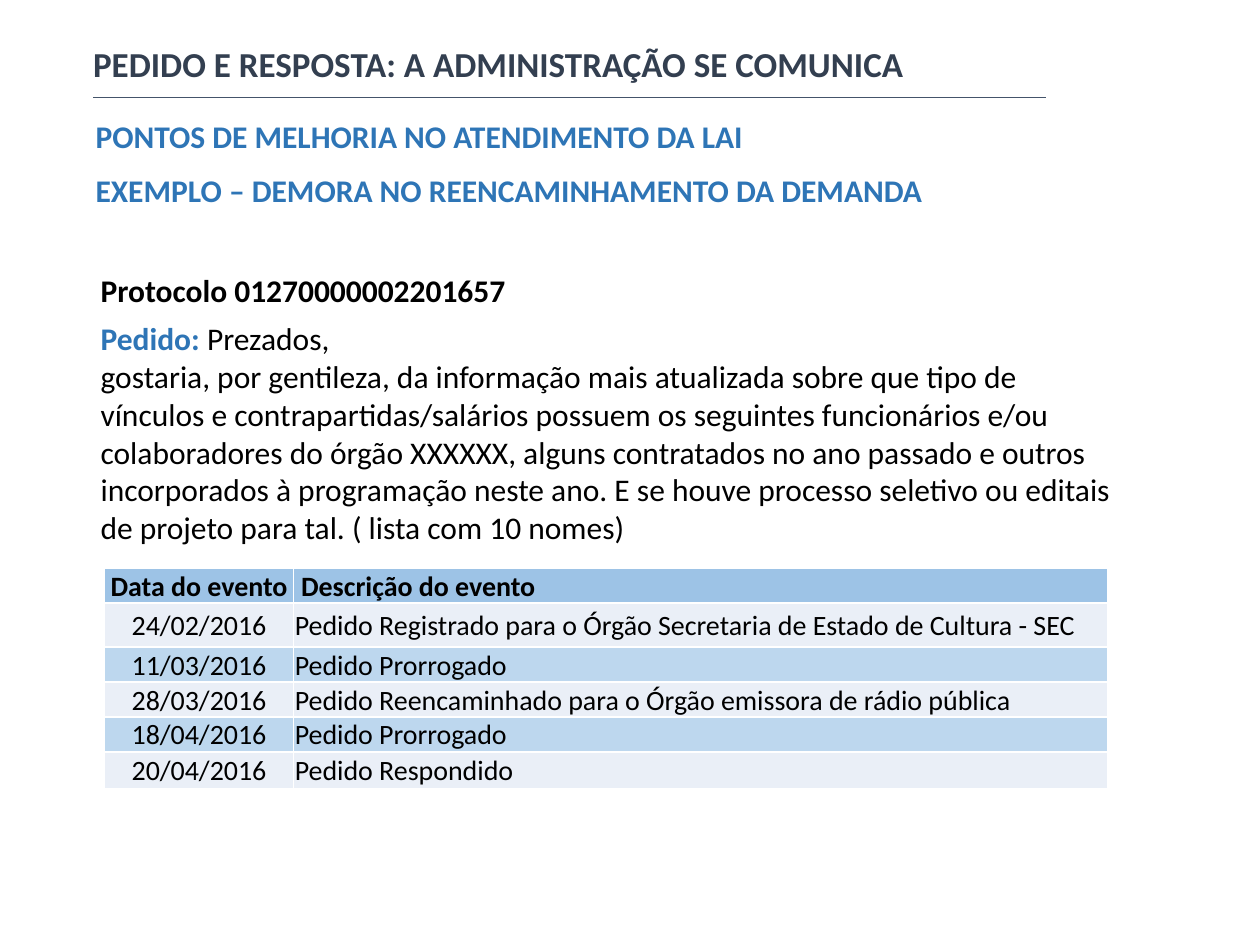
from dataclasses import dataclass

from lxml.etree import SubElement
from pptx import Presentation
from pptx.dml.color import RGBColor
from pptx.enum.shapes import MSO_CONNECTOR as Connector
from pptx.enum.text import MSO_ANCHOR as Anchor, MSO_AUTO_SIZE as AutoSize, PP_ALIGN as Align
from pptx.oxml.ns import qn
from pptx.util import Inches, Pt


@dataclass(frozen=True)
class Theme:
    font: str = "Calibri"
    title_size: int = 20
    body_size: int = 18
    table_size: int = 16
    title: str = "333F50"
    accent: str = "2E75B6"
    text: str = "000000"
    rule: str = "44546A"
    border: str = "FFFFFF"
    header_fill: str = "9DC3E6"
    row_fills: tuple = ("EAEFF7", "BDD7EE")


THEME = Theme()

REQUEST = (
    "gostaria, por gentileza, da informação mais atualizada sobre que tipo de vínculos e "
    "contrapartidas/salários possuem os seguintes funcionários e/ou colaboradores do órgão "
    "XXXXXX, alguns contratados no ano passado e outros incorporados à programação neste ano. "
    "E se houve processo seletivo ou editais de projeto para tal. ( lista com 10 nomes)"
)

EVENTS = [
    ("Data do evento", "Descrição do evento"),
    ("24/02/2016", "Pedido Registrado para o Órgão Secretaria de Estado de Cultura - SEC"),
    ("11/03/2016", "Pedido Prorrogado"),
    ("28/03/2016", "Pedido Reencaminhado para o Órgão emissora de rádio pública"),
    ("18/04/2016", "Pedido Prorrogado"),
    ("20/04/2016", "Pedido Respondido"),
]
COLUMN_WIDTHS = (1.5, 6.46)
ROW_HEIGHTS = (0.25, 0.35, 0.25, 0.25, 0.25, 0.29)


def add_text(para, text, *, size=THEME.body_size, color=THEME.text, bold=False):
    span = para.add_run()
    span.text = text
    span.font.name = THEME.font
    span.font.size = Pt(size)
    span.font.bold = bold
    span.font.color.rgb = RGBColor.from_string(color)


def add_box(page, left, top, width, height, wrap=False):
    box = page.shapes.add_textbox(Inches(left), Inches(top), Inches(width), Inches(height))
    frame = box.text_frame
    frame.word_wrap = wrap
    frame.auto_size = AutoSize.SHAPE_TO_FIT_TEXT
    return frame


def add_heading(page, text, left, top, width, height, **text_format):
    frame = add_box(page, left, top, width, height)
    add_text(frame.paragraphs[0], text, bold=True, **text_format)


def add_rule(page, left, right, top):
    rule = page.shapes.add_connector(
        Connector.STRAIGHT, Inches(left), Inches(top), Inches(right), Inches(top))
    rule.line.color.rgb = RGBColor.from_string(THEME.rule)
    rule.line.width = Pt(0.5)
    SubElement(rule._element.spPr, qn("a:effectLst"))


def add_request(page):
    frame = add_box(page, 0.7, 2.1, 8.28, 2.31, wrap=True)
    add_text(frame.paragraphs[0], "Protocolo 01270000002201657", bold=True)
    para = frame.add_paragraph()
    para.space_before = Pt(6)
    add_text(para, "Pedido: ", color=THEME.accent, bold=True)
    add_text(para, "Prezados,")
    para.add_line_break()
    add_text(para, REQUEST)


def set_borders(cell):
    """Draw the four cell borders; they must precede the fill in the XML."""
    properties = cell._tc.get_or_add_tcPr()
    for side in ("lnL", "lnR", "lnT", "lnB"):
        border = SubElement(properties, qn(f"a:{side}"), w=str(Pt(1)))
        fill = SubElement(border, qn("a:solidFill"))
        SubElement(fill, qn("a:srgbClr"), val=THEME.border)


def format_cell(cell, fill, left_margin):
    set_borders(cell)
    cell.fill.solid()
    cell.fill.fore_color.rgb = RGBColor.from_string(fill)
    cell.vertical_anchor = Anchor.MIDDLE
    cell.margin_left = Inches(left_margin)
    cell.margin_right = cell.margin_top = Inches(0.01)
    cell.margin_bottom = 0


def add_events(page, left, top):
    frame = page.shapes.add_table(
        len(EVENTS), len(COLUMN_WIDTHS), Inches(left), Inches(top),
        Inches(sum(COLUMN_WIDTHS)), Inches(sum(ROW_HEIGHTS)))
    table = frame.table
    for column, width in zip(table.columns, COLUMN_WIDTHS):
        column.width = Inches(width)
    for row, height in zip(table.rows, ROW_HEIGHTS):
        row.height = Inches(height)
    for i, event in enumerate(EVENTS):
        is_header = i == 0
        fill = THEME.header_fill if is_header else THEME.row_fills[(i - 1) % 2]
        for j, text in enumerate(event):
            cell = table.cell(i, j)
            is_date = j == 0
            format_cell(cell, fill, 0.06 if is_header and not is_date else 0.01)
            para = cell.text_frame.paragraphs[0]
            para.alignment = Align.CENTER if is_date else Align.LEFT
            add_text(para, text, size=THEME.table_size, bold=is_header)


def main():
    deck = Presentation()
    deck.slide_width, deck.slide_height = Inches(10), Inches(7.5)
    page = deck.slides.add_slide(deck.slide_layouts[6])
    add_heading(page, "PEDIDO E RESPOSTA: A ADMINISTRAÇÃO SE COMUNICA",
                0.64, 0.29, 6.69, 0.44, size=THEME.title_size, color=THEME.title)
    add_rule(page, 0.74, 8.3, 0.77)
    add_heading(page, "PONTOS DE MELHORIA NO ATENDIMENTO DA LAI",
                0.66, 0.88, 5.58, 0.4, color=THEME.accent)
    add_request(page)
    add_heading(page, "EXEMPLO – DEMORA NO REENCAMINHAMENTO DA DEMANDA",
                0.66, 1.31, 6.95, 0.4, color=THEME.accent)
    add_events(page, 0.83, 4.51)
    deck.save("out.pptx")


if __name__ == "__main__":
    main()
